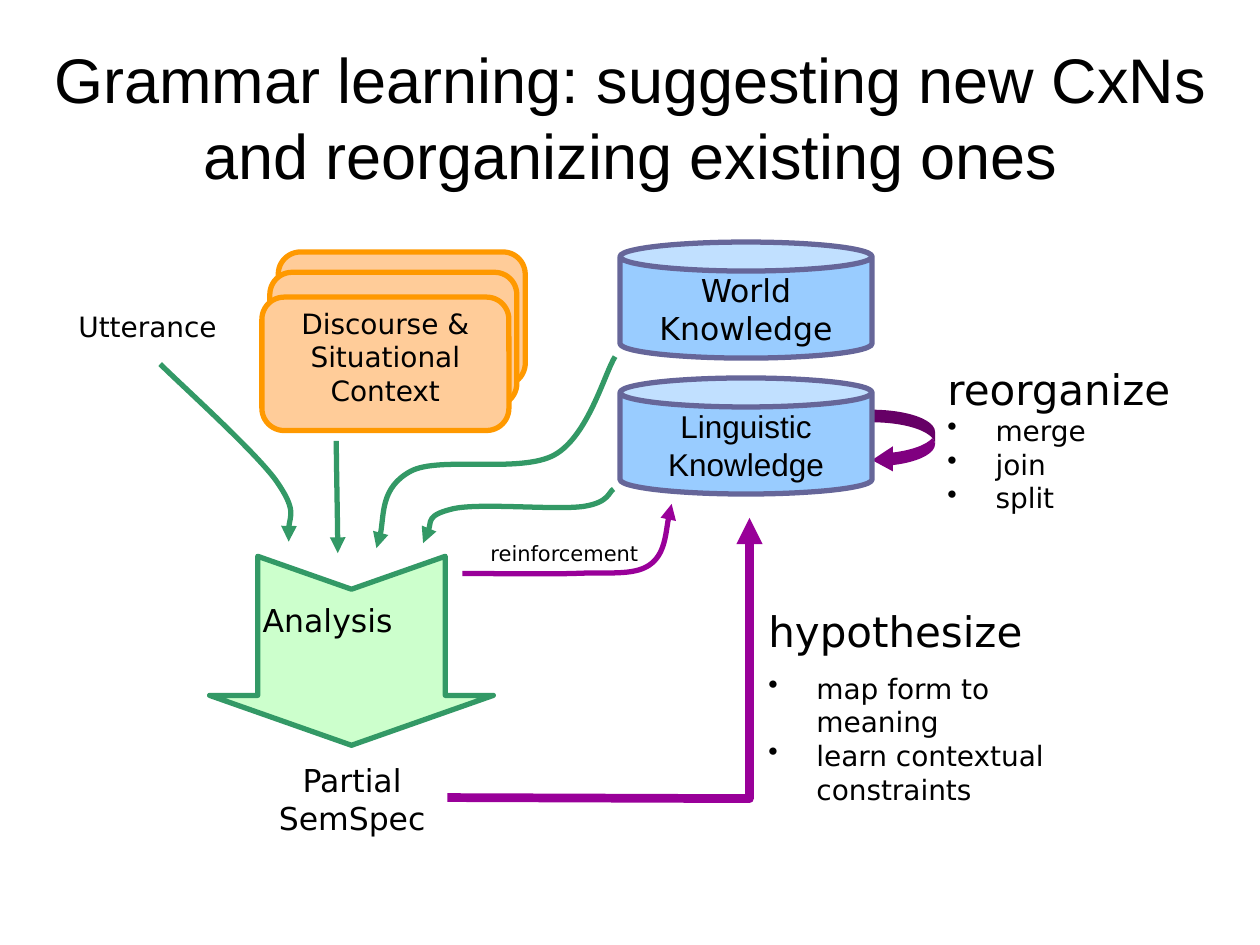
from dataclasses import dataclass

from lxml import etree
from pptx import Presentation
from pptx.dml.color import RGBColor
from pptx.enum import shapes, text
from pptx.oxml.ns import qn
from pptx.util import Cm, Pt


@dataclass(frozen=True)
class Theme:
    ink: str = "000000"
    peach: str = "FFCC99"
    orange: str = "FF9900"
    sky: str = "99CCFF"
    slate: str = "666699"
    mint: str = "CCFFCC"
    green: str = "339966"
    purple: str = "990099"
    plum: str = "800080"
    sans: str = "DejaVu Sans"
    plain: str = "Arial"
    title: int = 36
    head: int = 24
    label: int = 18
    body: int = 16
    note: int = 12
    rule: int = 3
    thick: int = 5


theme = Theme()
deck = Presentation()
deck.slide_width, deck.slide_height = Cm(25.4), Cm(19.05)
slide = deck.slides.add_slide(deck.slide_layouts[6])
pool = slide.shapes
mid, left = text.PP_ALIGN.CENTER, text.PP_ALIGN.LEFT


def write(shape, lines, size, font=theme.sans, pad=(0, 0, 0, 0), align=mid):
    """Fill a shape with wrapped text; pad is left, top, right, bottom in cm."""
    frame = shape.text_frame
    frame.word_wrap = True
    frame.vertical_anchor = text.MSO_ANCHOR.TOP
    frame.margin_left, frame.margin_top, frame.margin_right, frame.margin_bottom = map(Cm, pad)
    for i, line in enumerate(lines):
        para = frame.add_paragraph() if i else frame.paragraphs[0]
        para.text = line
        para.alignment = align
        para.font.name, para.font.size = font, Pt(size)
        para.font.color.rgb = RGBColor.from_string(theme.ink)
    return frame


def trace(points, color, width, curved=True):
    """Draw an arrow along points in cm; if curved, each three after the first make a Bézier."""
    spots = [(Cm(x), Cm(y)) for x, y in points]
    pen = pool.build_freeform(*spots[0])
    pen.add_line_segments(spots[1:], close=False)
    shape = pen.convert_to_shape()
    shape.shadow.inherit = False
    shape.fill.background()
    shape.line.color.rgb = RGBColor.from_string(color)
    shape.line.width = Pt(width)
    etree.SubElement(shape.line._get_or_add_ln(), qn("a:tailEnd"), type="triangle")
    if curved:
        route = next(shape._element.iter(qn("a:path")))
        steps = route.findall(qn("a:lnTo"))
        for i in range(0, len(steps), 3):
            bend = etree.SubElement(route, qn("a:cubicBezTo"))
            for step in steps[i:i + 3]:
                bend.append(step[0])
                route.remove(step)


# Title
box = pool.add_textbox(Cm(0.43), Cm(0.76), Cm(24.56), Cm(3.18))
title = write(box, ["Grammar learning: suggesting new CxNs and reorganizing existing ones"],
              theme.title, theme.plain, (0.25, 0.13, 0.25, 0.13))
title.vertical_anchor = text.MSO_ANCHOR.MIDDLE

# Blocks: kind, place, fill, line, adjustments, words, size, font, padding
kind = shapes.MSO_SHAPE
card = (kind.ROUNDED_RECTANGLE, theme.peach, theme.orange, [0.167])
can = (kind.CAN, theme.sky, theme.slate, [0.25])
loop = (kind.CURVED_LEFT_ARROW, theme.plum, None, [0.2, 0.4, 0.333])
flow = (kind.NOTCHED_RIGHT_ARROW, theme.mint, theme.green, [0.661, 0.264])
none = (0, 0, 0, 0)
inset = (0.23, 0.1, 0.23, 0.1)
blocks = [
    (loop, (17.58, 8.26, 1.27, 1.27), "", theme.body, theme.sans, none),
    (can, (12.5, 7.62, 5.08, 2.34), "Linguistic Knowledge", theme.label, theme.plain, none),
    (can, (12.5, 4.88, 5.08, 2.34), "World Knowledge", theme.label, theme.sans, none),
    (card, (5.61, 5.08, 4.98, 2.69), "", theme.body, theme.sans, none),
    (card, (5.44, 5.49, 4.98, 2.69), "", theme.body, theme.sans, none),
    (card, (5.28, 5.99, 4.98, 2.69), "Discourse & Situational Context",
     theme.body, theme.sans, (0, 0.05, 0, 0)),
    (flow, (5.18, 10.26, 3.81, 5.72), "Analysis", theme.label, theme.sans, inset),
]
for (form, fill, edge, bends), place, words, size, font, pad in blocks:
    block = pool.add_shape(form, *map(Cm, place))
    block.shadow.inherit = False
    block.fill.solid()
    block.fill.fore_color.rgb = RGBColor.from_string(fill)
    for i, bend in enumerate(bends):
        block.adjustments[i] = bend
    if edge:
        block.line.color.rgb = RGBColor.from_string(edge)
        block.line.width = Pt(theme.rule)
    else:
        block.line.fill.background()
    if words:
        frame = write(block, [words], size, font, pad)
    if form == kind.NOTCHED_RIGHT_ARROW:
        # The arrow points down while its words stay upright
        block.rotation = 90
        frame._txBody.bodyPr.set("vert", "eaVert")
        frame._txBody.bodyPr.set("rot", "10800000")

# Labels
labels = [
    ((9.73, 10.8, 3.3, 0.69), "reinforcement", theme.note, (0, 0.1, 0, 0)),
    ((1.07, 6.15, 3.81, 1.07), "Utterance", theme.body, (0.23, 0.1, 0.23, 0)),
    ((4.14, 15.24, 5.92, 1.7), "Partial\vSemSpec", theme.label, (0.23, 0.1, 0.23, 0)),
]
for place, words, size, pad in labels:
    write(pool.add_textbox(*map(Cm, place)), [words], size, pad=pad)

# Headed lists
lists = [
    ((18.85, 7.19, 5.28, 3.3), 0, ["reorganize", "merge", "join", "split"]),
    ((15.24, 12.07, 6.98, 4.34), 9,
     ["hypothesize", "map form to meaning", "learn contextual constraints"]),
]
for place, gap, lines in lists:
    box = pool.add_textbox(*map(Cm, place))
    head, *items = write(box, lines, theme.body, pad=(0.25, 0.13, 0.25, 0.13),
                         align=left).paragraphs
    head.font.size = Pt(theme.head)
    head.space_after = Pt(gap)
    for para in [head, *items]:
        props = para._p.get_or_add_pPr()
        props.set("marL", str(Cm(0.97)))
        props.set("indent", str(-Cm(0.97)))
    for para in items:
        mark = etree.Element(qn("a:buChar"), char="•")
        para._p.pPr.find(qn("a:defRPr")).addprevious(mark)

# Inputs flowing into the analysis
inputs = [
    [(3.23, 7.34), (3.61, 7.72), (5.13, 9.09), (5.56, 9.68),
     (5.99, 10.29), (5.77, 10.64), (5.82, 10.92)],
    [(6.78, 8.89), (6.78, 9.27), (6.81, 10.67), (6.81, 11.15)],
    [(12.4, 7.19), (12.19, 7.52), (11.86, 8.79), (11.18, 9.17), (10.49, 9.55),
     (8.86, 9.19), (8.28, 9.5), (7.67, 9.83), (7.75, 10.72), (7.59, 11.05)],
    [(12.37, 9.86), (12.27, 9.91), (12.29, 10.13), (11.76, 10.21), (11.2, 10.29),
     (9.65, 10.13), (9.12, 10.26), (8.59, 10.39), (8.66, 10.8), (8.53, 10.95)],
]
for points in inputs:
    trace(points, theme.green, theme.rule)

# Learning paths back to linguistic knowledge
trace([(9.32, 11.56), (9.7, 11.56), (11, 11.58), (11.61, 11.56), (12.24, 11.53),
       (12.75, 11.61), (13.08, 11.4), (13.41, 11.18), (13.46, 10.41), (13.54, 10.16)],
      theme.purple, theme.rule)
trace([(9.02, 16.08), (15.11, 16.1), (15.11, 10.44)], theme.purple, theme.thick, curved=False)

deck.save("out.pptx")
